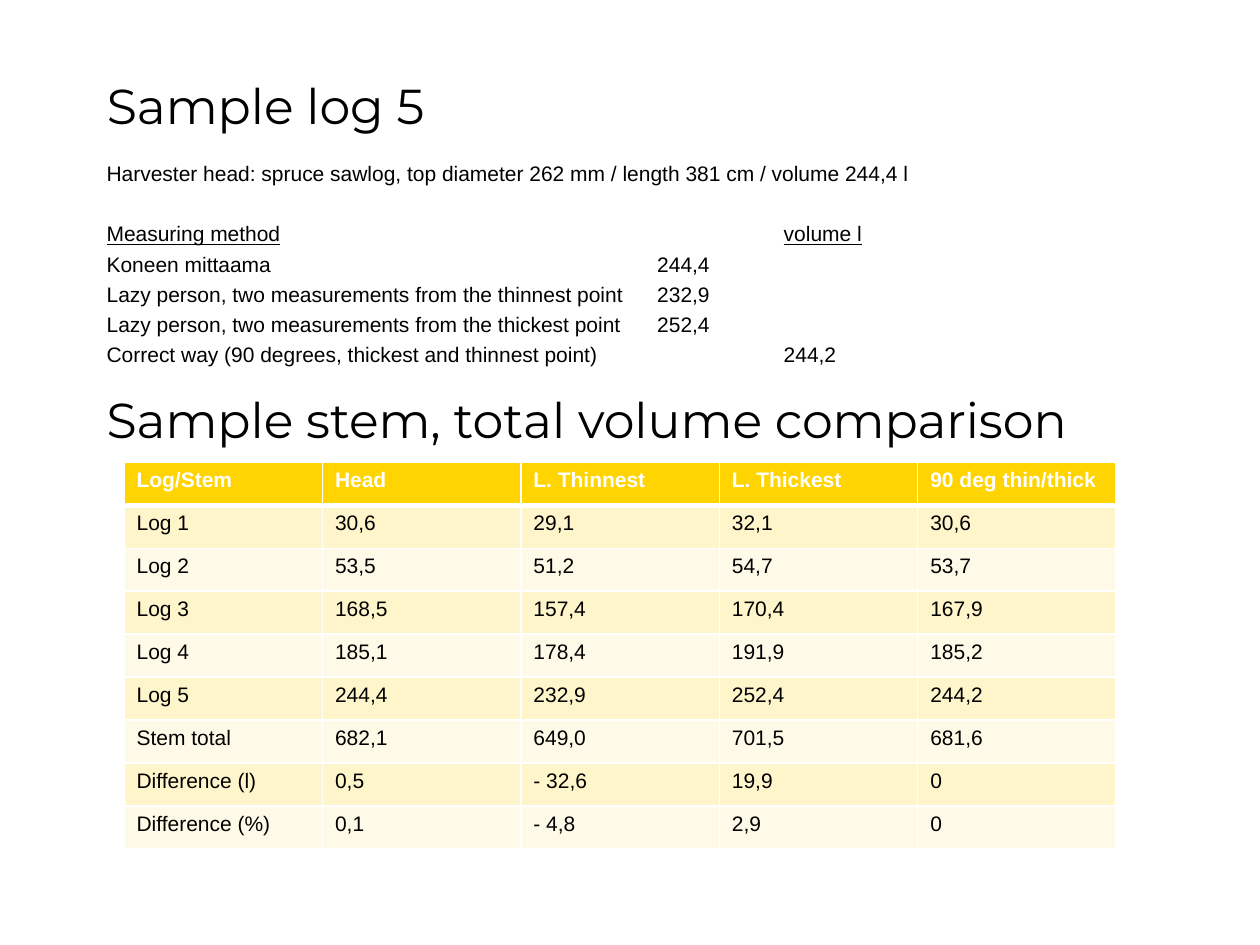
from lxml import etree
from pptx import Presentation
from pptx.dml.color import RGBColor
from pptx.enum.text import MSO_ANCHOR, MSO_AUTO_SIZE, PP_ALIGN
from pptx.oxml.ns import qn
from pptx.util import Cm, Pt

MIDDLE, TOP = MSO_ANCHOR.MIDDLE, MSO_ANCHOR.TOP
NO_FIT = MSO_AUTO_SIZE.NONE
LEFT = PP_ALIGN.LEFT

BLACK = RGBColor(0x00, 0x00, 0x00)
WHITE = RGBColor(0xFF, 0xFF, 0xFF)
GOLD = RGBColor(0xFF, 0xD4, 0x00)
BANDS = (RGBColor(0xFF, 0xFA, 0xE7), RGBColor(0xFF, 0xF5, 0xCB))

HEADING_FONT = "Montserrat"
BODY_FONT = "Arial"
MARGIN = Cm(1.9)
TAB_STOPS = (Cm(11.1), Cm(13.65))

INTRO = "Harvester head: spruce sawlog, top diameter 262 mm / length 381 cm / volume 244,4 l"
METHODS = (
    ("Koneen mittaama", "\t244,4"),
    ("Lazy person, two measurements from the thinnest point", "\t232,9"),
    ("Lazy person, two measurements from the thickest point", "\t252,4"),
    ("Correct way (90 degrees, thickest and thinnest point)", "\t\t244,2"),
)
VOLUMES = (
    ("Log/Stem", "Head", "L. Thinnest", "L. Thickest", "90 deg thin/thick"),
    ("Log 1", "30,6", "29,1", "32,1", "30,6"),
    ("Log 2", "53,5", "51,2", "54,7", "53,7"),
    ("Log 3", "168,5", "157,4", "170,4", "167,9"),
    ("Log 4", "185,1", "178,4", "191,9", "185,2"),
    ("Log 5", "244,4", "232,9", "252,4", "244,2"),
    ("Stem total", "682,1", "649,0", "701,5", "681,6"),
    ("Difference (l)", "0,5", "- 32,6", "19,9", "0"),
    ("Difference (%)", "0,1", "- 4,8", "2,9", "0"),
)


def add_run(p, text, size=12, font=BODY_FONT, color=BLACK, bold=False, underline=False):
    r = p.add_run()
    r.text = text
    r.font.size = Pt(size)
    r.font.name = font
    r.font.color.rgb = color
    r.font.bold = bold
    r.font.underline = underline


def set_frame(sp, anchor):
    tf = sp.text_frame
    tf.word_wrap = True
    tf.auto_size = NO_FIT
    tf.vertical_anchor = anchor
    return tf


def format_heading(sp, text, top, width, height):
    sp.left, sp.top, sp.width, sp.height = MARGIN, top, width, height
    p = set_frame(sp, MIDDLE).paragraphs[0]
    p.alignment = LEFT
    add_run(p, text, size=28, font=HEADING_FONT)


def add_tab_stops(p):
    tabs = etree.SubElement(p._p.get_or_add_pPr(), qn("a:tabLst"))
    for pos in TAB_STOPS:
        etree.SubElement(tabs, qn("a:tab"), pos=str(int(pos)), algn="l")


def add_method_line(tf, method, volume, space=2.9, underline=False):
    p = tf.add_paragraph()
    add_tab_stops(p)
    p.space_before = Pt(space)
    tabs, value = volume[:volume.rindex("\t") + 1], volume.lstrip("\t")
    add_run(p, method, underline=underline)
    add_run(p, tabs)
    add_run(p, value, underline=underline)


def add_measurements(slide):
    sp = slide.shapes.add_textbox(MARGIN, Cm(3.12), Cm(20.4), Cm(4.62))
    tf = set_frame(sp, TOP)
    add_run(tf.paragraphs[0], INTRO)
    add_method_line(tf, "Measuring method", "\t\tvolume l", space=19.8, underline=True)
    for method, volume in METHODS:
        add_method_line(tf, method, volume)


def add_border(cell, side, width):
    ln = etree.SubElement(cell._tc.get_or_add_tcPr(), qn(f"a:ln{side}"), w=str(int(Pt(width))))
    fill = etree.SubElement(ln, qn("a:solidFill"))
    etree.SubElement(fill, qn("a:srgbClr"), val=str(WHITE))


def format_cell(cell, text, row):
    header = row == 0
    for side in "LRTB":
        heavy = (row, side) in ((0, "B"), (1, "T"))
        add_border(cell, side, 3 if heavy else 1)
    cell.fill.solid()
    cell.fill.fore_color.rgb = GOLD if header else BANDS[row % 2]
    add_run(cell.text_frame.paragraphs[0], text, color=WHITE if header else BLACK, bold=header)


def add_volume_table(slide):
    rows, cols = len(VOLUMES), len(VOLUMES[0])
    frame = slide.shapes.add_table(rows, cols, Cm(2.5), Cm(9.32), Cm(20), Cm(7.8))
    table = frame.table
    for row, texts in enumerate(VOLUMES):
        for col, text in enumerate(texts):
            format_cell(table.cell(row, col), text, row)


def main():
    prs = Presentation()
    prs.slide_width, prs.slide_height = Cm(25.4), Cm(19.05)
    slide = prs.slides.add_slide(prs.slide_layouts[5])
    format_heading(slide.shapes.title, "Sample log 5", Cm(0.53), Cm(16.6), Cm(3.18))
    add_measurements(slide)
    subheading = slide.shapes.add_textbox(0, 0, 0, 0)
    format_heading(subheading, "Sample stem, total volume comparison", Cm(7.14), Cm(21.6), Cm(2.6))
    add_volume_table(slide)
    prs.save("out.pptx")


if __name__ == "__main__":
    main()
